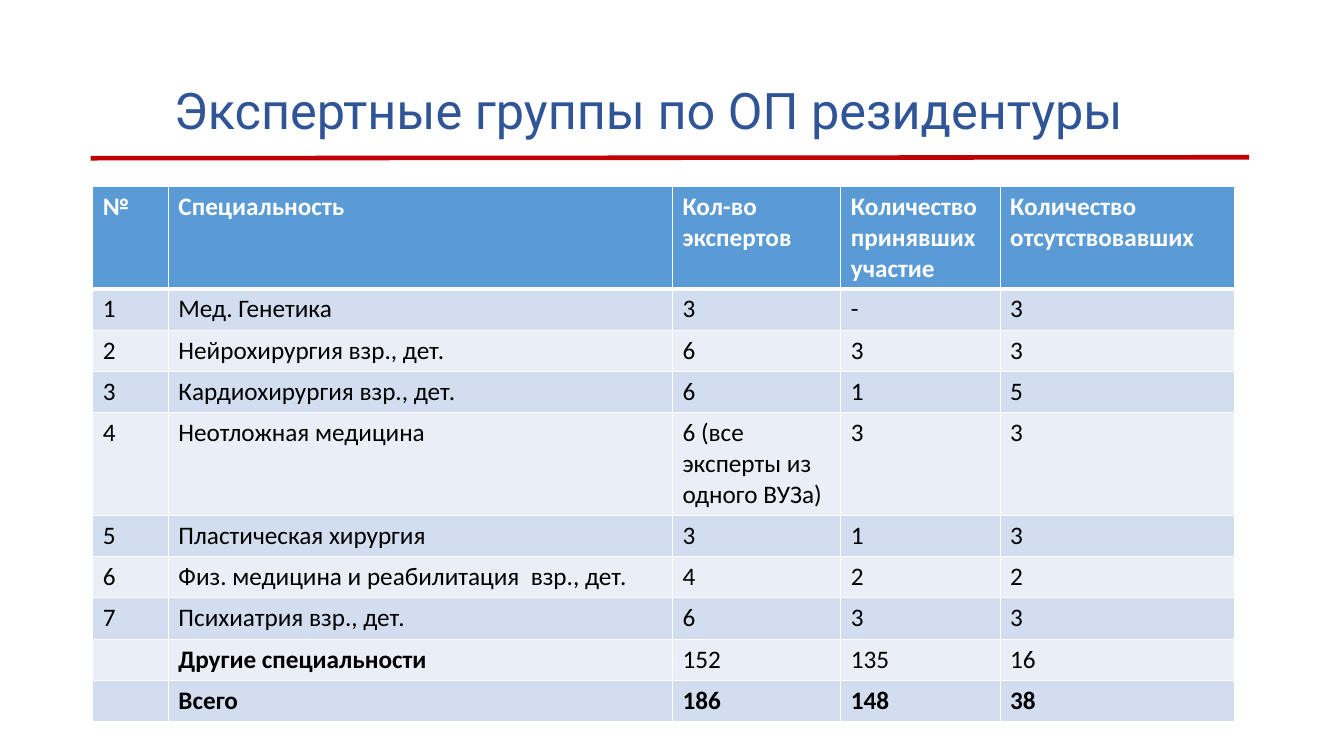
from lxml.etree import SubElement
from pptx import Presentation
from pptx.dml.color import RGBColor
from pptx.enum.shapes import MSO_CONNECTOR
from pptx.enum.text import MSO_ANCHOR, MSO_AUTO_SIZE, PP_ALIGN
from pptx.oxml.ns import qn
from pptx.util import Emu, Pt

EMU_PER_PX = 9144
TITLE_ONLY = 5


def px(length):
    return Emu(length * EMU_PER_PX)


def color(hex_value):
    return RGBColor.from_string(hex_value)


def apply(target, values):
    for name, value in values.items():
        setattr(target, name, value)


class SlideBuilder:
    title_font = {"name": "Roboto", "size": Pt(36), "bold": False}
    body_font = {"name": "Calibri", "size": Pt(18)}
    title_color = "2F5597"
    header_fill = "5B9BD5"
    band_fills = ("EAEFF7", "D2DEEF")
    border_color = "FFFFFF"
    rule_color = "C00000"

    def __init__(self, presentation):
        self.slide = presentation.slides.add_slide(
            presentation.slide_layouts[TITLE_ONLY])

    def set_text(self, frame, text, font, ink, bold=False):
        frame.text = text
        for run in frame.paragraphs[0].runs:
            apply(run.font, {**font, "bold": bold})
            run.font.color.rgb = color(ink)

    def title(self, text, left, top, width, height):
        heading = self.slide.shapes.title
        apply(heading, {"left": px(left), "top": px(top),
                        "width": px(width), "height": px(height)})
        frame = heading.text_frame
        self.set_text(frame, text, self.title_font, self.title_color)
        apply(frame, {"vertical_anchor": MSO_ANCHOR.MIDDLE,
                      "auto_size": MSO_AUTO_SIZE.NONE, "word_wrap": True})
        apply(frame.paragraphs[0], {"alignment": PP_ALIGN.CENTER,
                                    "line_spacing": 0.9})

    def rule(self, x1, y1, x2, y2, weight):
        underline = self.slide.shapes.add_connector(
            MSO_CONNECTOR.STRAIGHT, px(x1), px(y1), px(x2), px(y2))
        underline.line.color.rgb = color(self.rule_color)
        underline.line.width = Pt(weight)
        SubElement(underline._element.spPr, qn("a:effectLst"))

    def borders(self, cell, weights):
        properties = cell._tc.get_or_add_tcPr()
        for side, weight in weights.items():
            edge = SubElement(properties, qn(f"a:ln{side}"), w=str(Pt(weight)))
            fill = SubElement(edge, qn("a:solidFill"))
            SubElement(fill, qn("a:srgbClr"), val=self.border_color)

    def table(self, rows, left, top, widths, row_height, is_bold):
        grid = self.slide.shapes.add_table(
            len(rows), len(widths), px(left), px(top),
            px(sum(widths)), px(row_height * len(rows))).table
        for column, width in zip(grid.columns, widths):
            column.width = px(width)
        for r, values in enumerate(rows):
            grid.rows[r].height = px(row_height)
            for c, value in enumerate(values):
                cell = grid.cell(r, c)
                self.set_text(cell.text_frame, value, self.body_font,
                              "000000" if r else "FFFFFF", is_bold(r, c))
                self.borders(cell, {"L": 1, "R": 1, "T": 3 if r == 1 else 1,
                                    "B": 1 if r else 3})
                cell.fill.solid()
                cell.fill.fore_color.rgb = color(
                    self.band_fills[r % 2] if r else self.header_fill)


SPECIALTIES = [
    ("№", "Специальность", "Кол-во экспертов",
     "Количество принявших участие", "Количество отсутствовавших"),
    ("1", "Мед. Генетика", "3", "-", "3"),
    ("2", "Нейрохирургия взр., дет.", "6", "3", "3"),
    ("3", "Кардиохирургия взр., дет.", "6", "1", "5"),
    ("4", "Неотложная медицина", "6 (все эксперты из одного ВУЗа)", "3", "3"),
    ("5", "Пластическая хирургия", "3", "1", "3"),
    ("6", "Физ. медицина и реабилитация  взр., дет.", "4", "2", "2"),
    ("7", "Психиатрия взр., дет.", "6", "3", "3"),
    ("", "Другие специальности", "152", "135", "16"),
    ("", "Всего", "186", "148", "38"),
]


def main():
    presentation = Presentation()
    apply(presentation, {"slide_width": px(1333), "slide_height": px(750)})
    total_row = len(SPECIALTIES) - 1
    builder = SlideBuilder(presentation)
    builder.title("Экспертные группы по ОП резидентуры ", 58, 40, 1183, 145)
    builder.table(SPECIALTIES, 92, 185, (75, 500, 167, 158, 233), 41,
                  lambda r, c: r in (0, total_row) or (r, c) == (total_row - 1, 1))
    builder.rule(90, 157, 1239, 156, 3.25)
    presentation.save("out.pptx")


if __name__ == "__main__":
    main()
